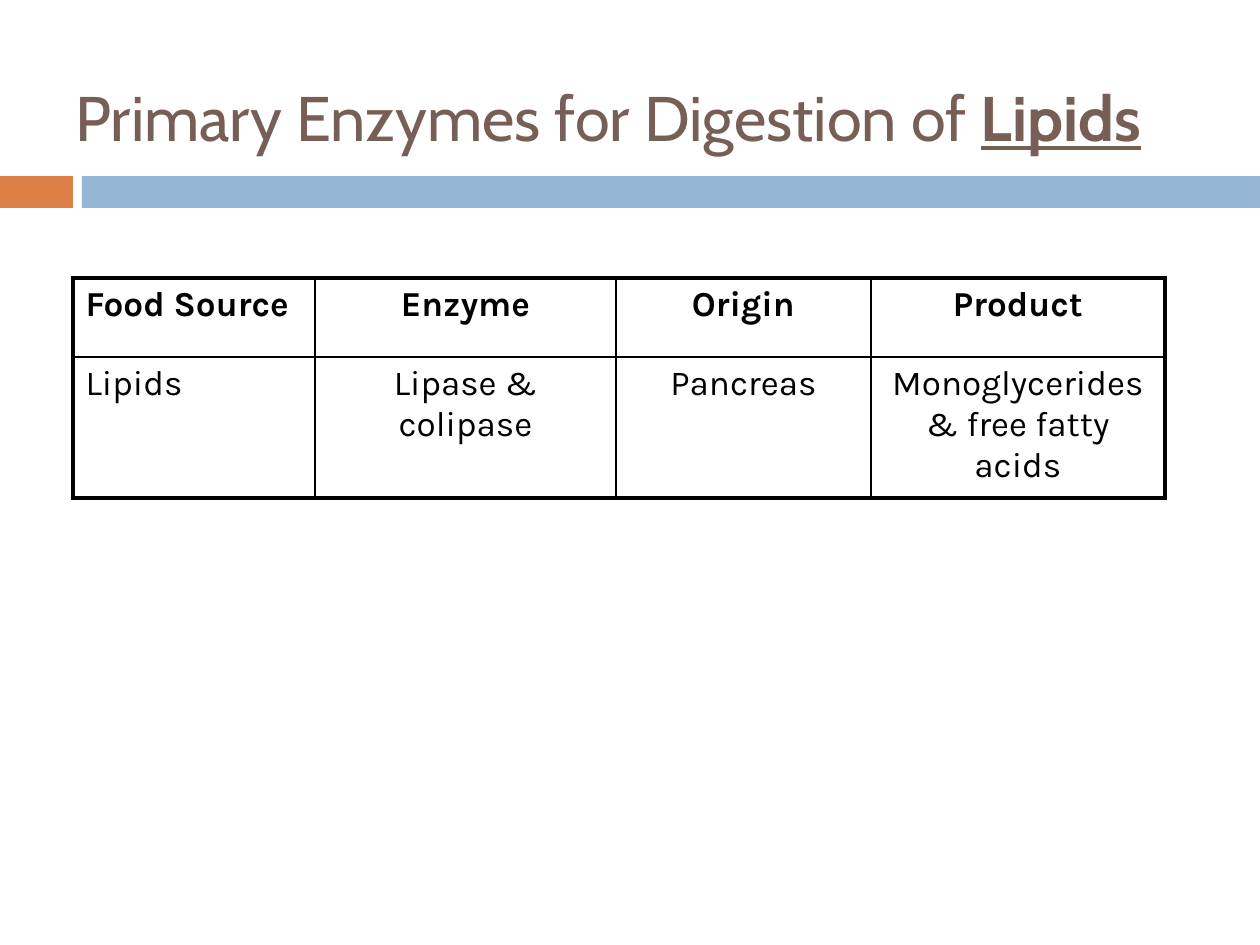
"""Slide with a table of the enzymes that digest lipids."""
from lxml import etree
from pptx import Presentation
from pptx import util as u
from pptx.dml.color import RGBColor
from pptx.enum import shapes, text
from pptx.oxml import ns

ORANGE = RGBColor(0xDD, 0x80, 0x47)
BLUE = RGBColor(0x94, 0xB6, 0xD2)
BROWN = RGBColor(0x77, 0x5F, 0x55)
BLACK = RGBColor(0, 0, 0)

TITLE = [("Primary Enzymes for Digestion of ", False), ("Lipids", True)]
BARS = [(0, 73, ORANGE), (82, 1178, BLUE)]
ROWS = [
    ["Food Source", "Enzyme", "Origin", "Product"],
    ["Lipids", "Lipase & colipase", "Pancreas", "Monoglycerides & free fatty acids"],
]
COL_WIDTHS = [242, 301, 255, 294]
ROW_HEIGHTS = [79, 141]
THIN, THICK = 1, 2.25


def px(n):
    return u.Emu(n * u.Inches(1) // 126)


def set_borders(cell, widths):
    tc_pr = cell._tc.get_or_add_tcPr()
    for side, width in widths.items():
        ln = etree.SubElement(tc_pr, ns.qn(f"a:ln{side}"), w=str(u.Pt(width)))
        fill = etree.SubElement(ln, ns.qn("a:solidFill"))
        etree.SubElement(fill, ns.qn("a:srgbClr"), val=str(BLACK))


def add_bars(s):
    for left, width, color in BARS:
        sp = s.shapes.add_shape(shapes.MSO_SHAPE.RECTANGLE, px(left), px(176), px(width), px(32))
        sp.shadow.inherit = False
        sp.fill.solid()
        sp.fill.fore_color.rgb = color
        sp.line.fill.background()


def add_title(s):
    tf = s.shapes.add_textbox(px(63), px(38), px(1134), px(157)).text_frame
    tf.word_wrap = True
    tf.vertical_anchor = text.MSO_ANCHOR.MIDDLE
    p = tf.paragraphs[0]
    p.font.name, p.font.size = "Cabin", u.Pt(36)
    p.font.color.rgb = BROWN
    for words, strong in TITLE:
        r = p.add_run()
        r.text = words
        if strong:
            r.font.bold = r.font.underline = True


def add_enzyme_table(s):
    last_row, last_col = len(ROWS) - 1, len(COL_WIDTHS) - 1
    table = s.shapes.add_table(len(ROWS), len(COL_WIDTHS), px(73), px(278),
                               px(sum(COL_WIDTHS)), px(sum(ROW_HEIGHTS))).table
    table.first_row = table.horz_banding = False
    for col, width in zip(table.columns, COL_WIDTHS):
        col.width = px(width)
    for i, (row, height) in enumerate(zip(ROWS, ROW_HEIGHTS)):
        table.rows[i].height = px(height)
        for j, words in enumerate(row):
            cell = table.cell(i, j)
            outer = {"L": j == 0, "R": j == last_col, "T": i == 0, "B": i == last_row}
            set_borders(cell, {k: THICK if edge else THIN for k, edge in outer.items()})
            cell.fill.background()
            p = cell.text_frame.paragraphs[0]
            p.text = words
            p.alignment = text.PP_ALIGN.CENTER if j else text.PP_ALIGN.LEFT
            p.font.name, p.font.size, p.font.bold = "Karla", u.Pt(20), i == 0
            p.font.color.rgb = BLACK


def main():
    prs = Presentation()
    prs.slide_width, prs.slide_height = px(1260), px(945)
    s = prs.slides.add_slide(prs.slide_layouts[6])
    add_bars(s)
    add_title(s)
    add_enzyme_table(s)
    prs.save("out.pptx")


if __name__ == "__main__":
    main()
